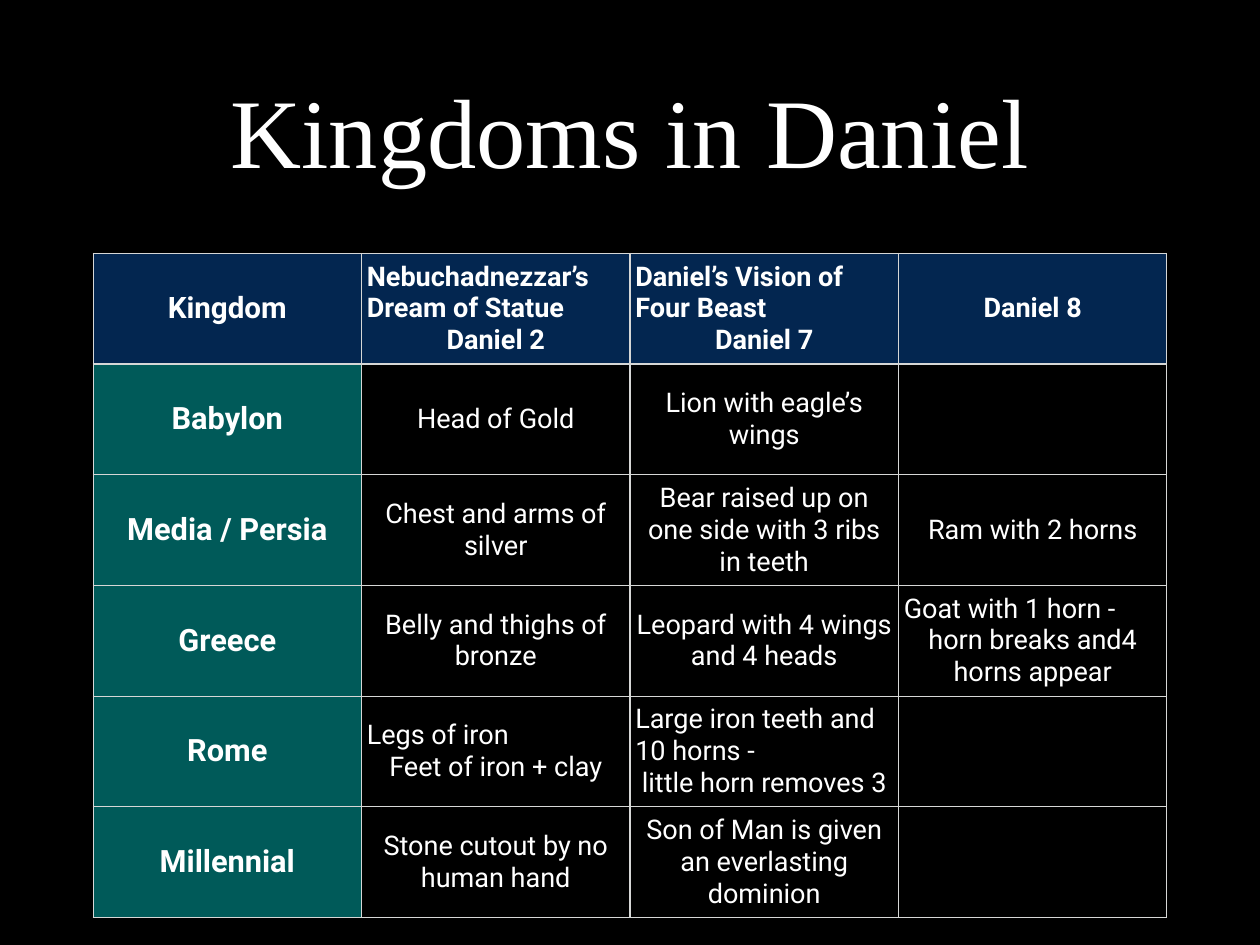
from dataclasses import dataclass
from typing import Optional

from lxml import etree
from pptx import Presentation
from pptx.dml.color import RGBColor
from pptx.enum import text as t
from pptx.oxml import ns
from pptx.util import Inches, Pt

BLACK = RGBColor(0x00, 0x00, 0x00)
WHITE = RGBColor(0xFF, 0xFF, 0xFF)
NAVY = RGBColor(0x03, 0x26, 0x50)
TEAL = RGBColor(0x00, 0x5A, 0x59)
GREY = RGBColor(0xD6, 0xD7, 0xD6)
PAD = Inches(0.06)
SIDE = Inches(3.03)
TALL = Inches(1.25)


@dataclass
class Look:
    size: float
    bold: bool
    fill: Optional[RGBColor] = None
    base: float = 1  # width of the bottom rule, in points


CORNER = Look(24, True, NAVY, 2)
HEAD = Look(22, True, NAVY, 2)
REALM = Look(25, True, TEAL)
BODY = Look(22, False)

ROWS = [
    ["Kingdom", "Nebuchadnezzar’s\nDream of Statue\nDaniel 2",
     "Daniel’s Vision of Four Beast\nDaniel 7", "Daniel 8"],
    ["Babylon", "Head of Gold", "Lion with eagle’s wings", ""],
    ["Media / Persia", "Chest and arms of silver",
     "Bear raised up on one side with 3 ribs in teeth", "Ram with 2 horns"],
    ["Greece", "Belly and thighs of bronze", "Leopard with 4 wings and 4 heads",
     "Goat with 1 horn -\nhorn breaks and4 horns appear"],
    ["Rome", "Legs of iron\nFeet of iron + clay",
     "Large iron teeth and 10 horns -\nlittle horn removes 3", ""],
    ["Millennial", "Stone cutout by no human hand",
     "Son of Man is given an everlasting dominion", ""],
]


def write(frame, words: str, *, size: float, font: str = "Roboto",
          bold: bool = False) -> None:
    """Fill a text frame: the last line is centred, lines above it sit left."""
    frame.word_wrap = True
    lines = words.split("\n")
    for i, line in enumerate(lines):
        para = frame.paragraphs[0] if i == 0 else frame.add_paragraph()
        last = i == len(lines) - 1
        para.alignment = t.PP_ALIGN.CENTER if last else t.PP_ALIGN.LEFT
        para.font.size = Pt(size)
        if line:
            run = para.add_run()
            run.text = line
            run.font.name = font
            run.font.size = Pt(size)
            run.font.bold = bold
            run.font.color.rgb = WHITE


def pad(box) -> None:
    """Set equal margins on a cell or a text frame."""
    box.margin_left = box.margin_right = PAD
    box.margin_top = box.margin_bottom = PAD
    box.vertical_anchor = t.MSO_ANCHOR.MIDDLE


def rule(cell, edge: str, width: float) -> None:
    """Draw one border of a cell."""
    props = cell._tc.get_or_add_tcPr()
    line = etree.SubElement(props, ns.qn(f"a:ln{edge}"), w=str(Pt(width)))
    fill = etree.SubElement(line, ns.qn("a:solidFill"))
    etree.SubElement(fill, ns.qn("a:srgbClr"), val=str(GREY))


def style(cell, words: str, look: Look, top: float) -> None:
    """Format and fill one table cell."""
    pad(cell)
    for edge, width in zip("LRTB", (1, 1, top, look.base)):
        rule(cell, edge, width)
    if look.fill is None:
        cell.fill.background()
    else:
        cell.fill.solid()
        cell.fill.fore_color.rgb = look.fill
    write(cell.text_frame, words, size=look.size, bold=look.bold)


def choose(row: int, col: int) -> Look:
    """Pick the look from the place in the grid."""
    if row == 0:
        return HEAD if col else CORNER
    return BODY if col else REALM


def main() -> None:
    deck = Presentation()
    deck.slide_width, deck.slide_height = Inches(14.22), Inches(10.67)
    slide = deck.slides.add_slide(deck.slide_layouts[5])
    slide.background.fill.solid()
    slide.background.fill.fore_color.rgb = BLACK

    # Title
    title = slide.shapes.title
    title.left, title.top = Inches(1.04), Inches(0.28)
    title.width, title.height = Inches(12.14), Inches(2.36)
    frame = title.text_frame
    frame.auto_size = t.MSO_AUTO_SIZE.NONE
    pad(frame)
    write(frame, "Kingdoms in Daniel", size=80, font="Times New Roman")

    # Table of kingdoms
    count, wide = len(ROWS), len(ROWS[0])
    table = slide.shapes.add_table(count, wide, Inches(1.05), Inches(2.86),
                                   SIDE * wide, TALL * count).table
    table.first_row = table.horz_banding = False
    for col in table.columns:
        col.width = SIDE
    for r, row in enumerate(ROWS):
        table.rows[r].height = TALL
        for c, words in enumerate(row):
            top = HEAD.base if r == 1 else 1
            style(table.cell(r, c), words, choose(r, c), top)

    deck.save("out.pptx")


if __name__ == "__main__":
    main()
